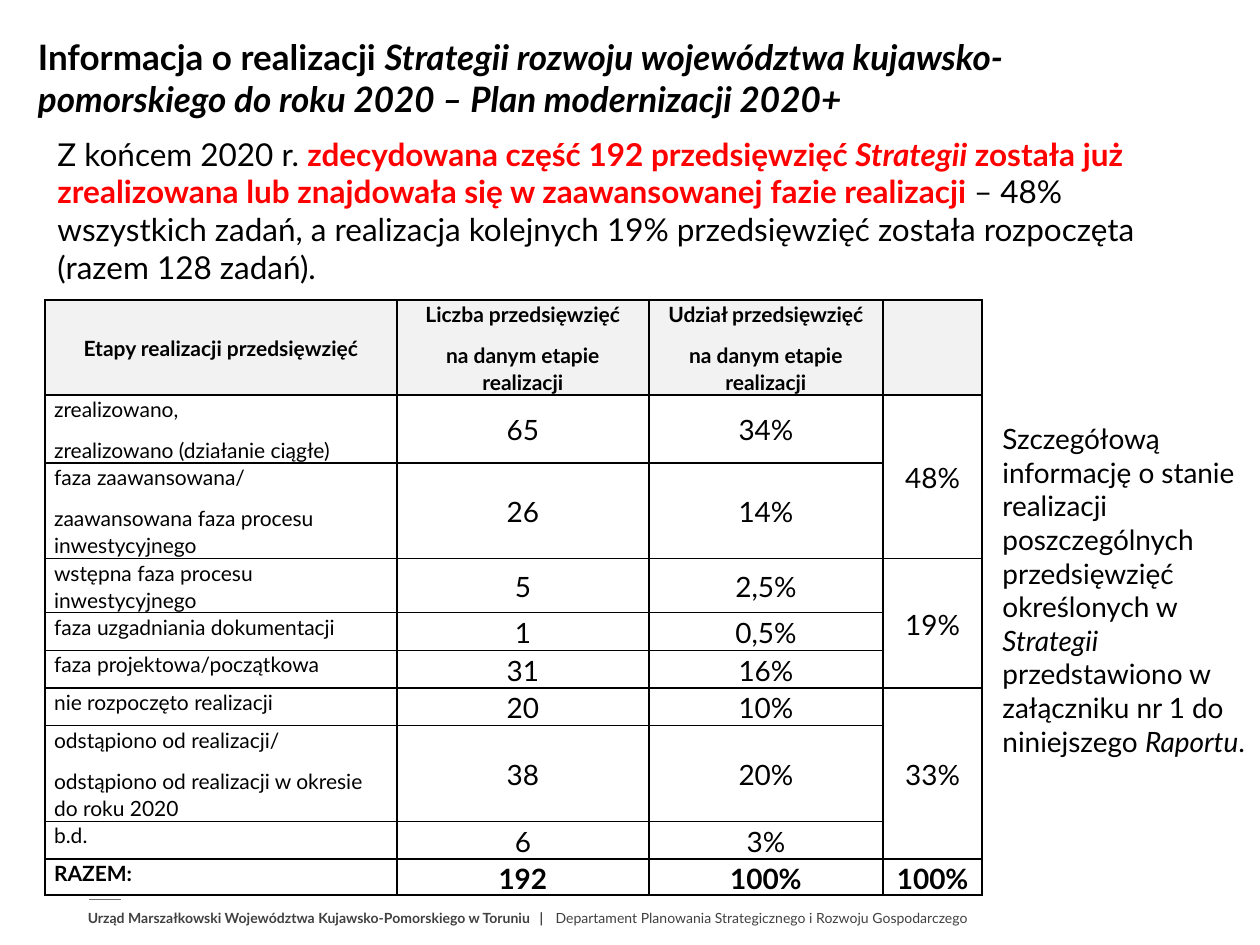
from lxml.etree import SubElement
from pptx import Presentation
from pptx.dml.color import RGBColor
from pptx.enum.shapes import MSO_CONNECTOR
from pptx.enum.text import MSO_ANCHOR, PP_ALIGN
from pptx.oxml.ns import qn
from pptx.util import Cm, Pt

COLOURS = {"text": "000000", "accent": "FF0000", "header": "F2F2F2",
           "footer": "414141", "rule": "6E6E6E"}
FONT = "Lato"

STAGES = [
    (["zrealizowano,", "zrealizowano (działanie ciągłe)"], "65", "34%"),
    (["faza zaawansowana/", "zaawansowana faza procesu inwestycyjnego"], "26", "14%"),
    (["wstępna faza procesu inwestycyjnego"], "5", "2,5%"),
    (["faza uzgadniania dokumentacji"], "1", "0,5%"),
    (["faza projektowa/początkowa"], "31", "16%"),
    (["nie rozpoczęto realizacji"], "20", "10%"),
    (["odstąpiono od realizacji/", "odstąpiono od realizacji w okresie do roku 2020"], "38", "20%"),
    (["b.d."], "6", "3%"),
]
HEADINGS = [
    ["Etapy realizacji przedsięwzięć"],
    ["Liczba przedsięwzięć", "na danym etapie realizacji"],
    ["Udział przedsięwzięć", "na danym etapie realizacji"],
    [],
]
GROUPS = [(1, 2, "48%"), (3, 5, "19%"), (6, 8, "33%")]  # first row, last row, share
COLUMN_WIDTHS = [7.09, 5.08, 4.72, 2.0]
ROW_HEIGHTS = [1.75, 1.37, 1.93, 1.07, 0.76, 0.76, 0.76, 1.93, 0.76, 0.66]


def add_run(paragraph, text, size=12, colour="text", bold=False, italic=False):
    run = paragraph.add_run()
    run.text = text
    font = run.font
    font.name, font.size, font.bold, font.italic = FONT, Pt(size), bold, italic
    font.color.rgb = RGBColor.from_string(COLOURS[colour])


class SlideBuilder:
    """Holds the slide and draws each kind of element in its style."""

    def __init__(self, slide):
        self.slide = slide

    def fill_frame(self, shape, runs, anchor=MSO_ANCHOR.TOP, **style):
        """Put (text, format) runs into one paragraph with the common style."""
        frame = shape.text_frame
        frame.word_wrap = True
        frame.vertical_anchor = anchor
        paragraph = frame.paragraphs[0]
        paragraph.alignment = PP_ALIGN.LEFT
        paragraph.line_spacing = 1.0
        for text, extra in runs:
            add_run(paragraph, text, **{**style, **extra})
        return paragraph

    def title(self, box, runs, **style):
        title = self.slide.shapes.title
        title.left, title.top, title.width, title.height = map(Cm, box)
        self.fill_frame(title, runs, **style)

    def text(self, box, runs, **style):
        return self.fill_frame(self.slide.shapes.add_textbox(*map(Cm, box)), runs, **style)

    def rule(self, x1, x2, y):
        line = self.slide.shapes.add_connector(
            MSO_CONNECTOR.STRAIGHT, Cm(x1), Cm(y), Cm(x2), Cm(y))
        line.line.color.rgb = RGBColor.from_string(COLOURS["rule"])
        line.line.width = Pt(0.5)
        SubElement(line._element.spPr, qn("a:effectLst"))

    def table(self, left, top, widths, heights):
        table = self.slide.shapes.add_table(
            len(heights), len(widths), Cm(left), Cm(top),
            Cm(sum(widths)), Cm(sum(heights))).table
        table.first_row = table.horz_banding = False
        for column, width in zip(table.columns, widths):
            column.width = Cm(width)
        for row, height in zip(table.rows, heights):
            row.height = Cm(height)
        for cell in table.iter_cells():
            self.border(cell)
            cell.fill.background()
            cell.margin_left = cell.margin_right = Cm(0.18)
            cell.margin_top = cell.margin_bottom = 0
        return table

    def border(self, cell):
        properties = cell._tc.get_or_add_tcPr()
        for side in ("lnL", "lnR", "lnT", "lnB"):
            line = SubElement(properties, qn(f"a:{side}"), w=str(Pt(1)))
            solid = SubElement(line, qn("a:solidFill"))
            SubElement(solid, qn("a:srgbClr"), val=COLOURS["text"])

    def cell(self, cell, lines, centred=True, **style):
        cell.vertical_anchor = MSO_ANCHOR.MIDDLE if centred else MSO_ANCHOR.TOP
        for index, line in enumerate(lines):
            frame = cell.text_frame
            paragraph = frame.add_paragraph() if index else frame.paragraphs[0]
            paragraph.alignment = PP_ALIGN.CENTER if centred else PP_ALIGN.LEFT
            paragraph.line_spacing = 1.07
            paragraph.space_after = Pt(8)
            add_run(paragraph, line, **style)


def add_stage_table(builder):
    table = builder.table(0.91, 6.05, COLUMN_WIDTHS, ROW_HEIGHTS)
    for column, lines in enumerate(HEADINGS):
        heading = table.cell(0, column)
        heading.fill.solid()
        heading.fill.fore_color.rgb = RGBColor.from_string(COLOURS["header"])
        builder.cell(heading, lines, bold=True)
    total_row = len(STAGES) + 1
    for row, (stage, count, share) in enumerate(STAGES + [(["RAZEM:"], "192", "100%")], 1):
        bold = row == total_row
        builder.cell(table.cell(row, 0), stage, centred=False, bold=bold)
        for column, value in enumerate((count, share), 1):
            builder.cell(table.cell(row, column), [value], size=16, bold=bold)
    for first, last, share in GROUPS:
        table.cell(first, 3).merge(table.cell(last, 3))
        builder.cell(table.cell(first, 3), [share], size=16)
    builder.cell(table.cell(total_row, 3), ["100%"], size=16, bold=True)


def add_footer(builder):
    builder.rule(1.8, 2.44, 18.14)
    footer = builder.text((1.52, 18.24, 20.42, 0.56), [
        ("Urząd Marszałkowski Województwa Kujawsko-Pomorskiego w Toruniu\t|\t", {"bold": True}),
        ("Departament Planowania Strategicznego i Rozwoju Gospodarczego", {}),
    ], size=8, colour="footer", anchor=MSO_ANCHOR.MIDDLE)
    footer.line_spacing = 0.9
    stops = SubElement(footer._p.get_or_add_pPr(), qn("a:tabLst"))
    for position in (9.11, 9.43):
        SubElement(stops, qn("a:tab"), pos=str(Cm(position)), algn="l")


def main():
    presentation = Presentation()
    presentation.slide_width, presentation.slide_height = Cm(25.4), Cm(19.05)
    builder = SlideBuilder(presentation.slides.add_slide(presentation.slide_layouts[5]))
    add_footer(builder)
    builder.title((0.51, 0.58, 22.45, 1.96), [
        ("Informacja o realizacji ", {}),
        ("Strategii rozwoju województwa kujawsko-pomorskiego do roku 2020 – "
         "Plan modernizacji 2020+", {"italic": True}),
    ], size=20, bold=True)
    highlight = {"colour": "accent", "bold": True}
    builder.text((0.91, 2.59, 22.45, 4.11), [
        ("Z końcem 2020 r. ", {}),
        ("zdecydowana część 192 przedsięwzięć ", highlight),
        ("Strategii", {**highlight, "italic": True}),
        (" została już zrealizowana lub znajdowała się w zaawansowanej fazie realizacji ", highlight),
        ("– 48% wszystkich zadań, a realizacja kolejnych 19% przedsięwzięć "
         "została rozpoczęta (razem 128 zadań).", {}),
    ], size=18)
    add_stage_table(builder)
    builder.text((19.96, 8.38, 6.02, 7.09), [
        ("Szczegółową informację o stanie realizacji poszczególnych "
         "przedsięwzięć określonych w ", {}),
        ("Strategii ", {"italic": True}),
        ("przedstawiono w załączniku nr 1 do niniejszego ", {}),
        ("Raportu", {"italic": True}),
        (".", {}),
    ], size=16)
    presentation.save("out.pptx")


if __name__ == "__main__":
    main()
